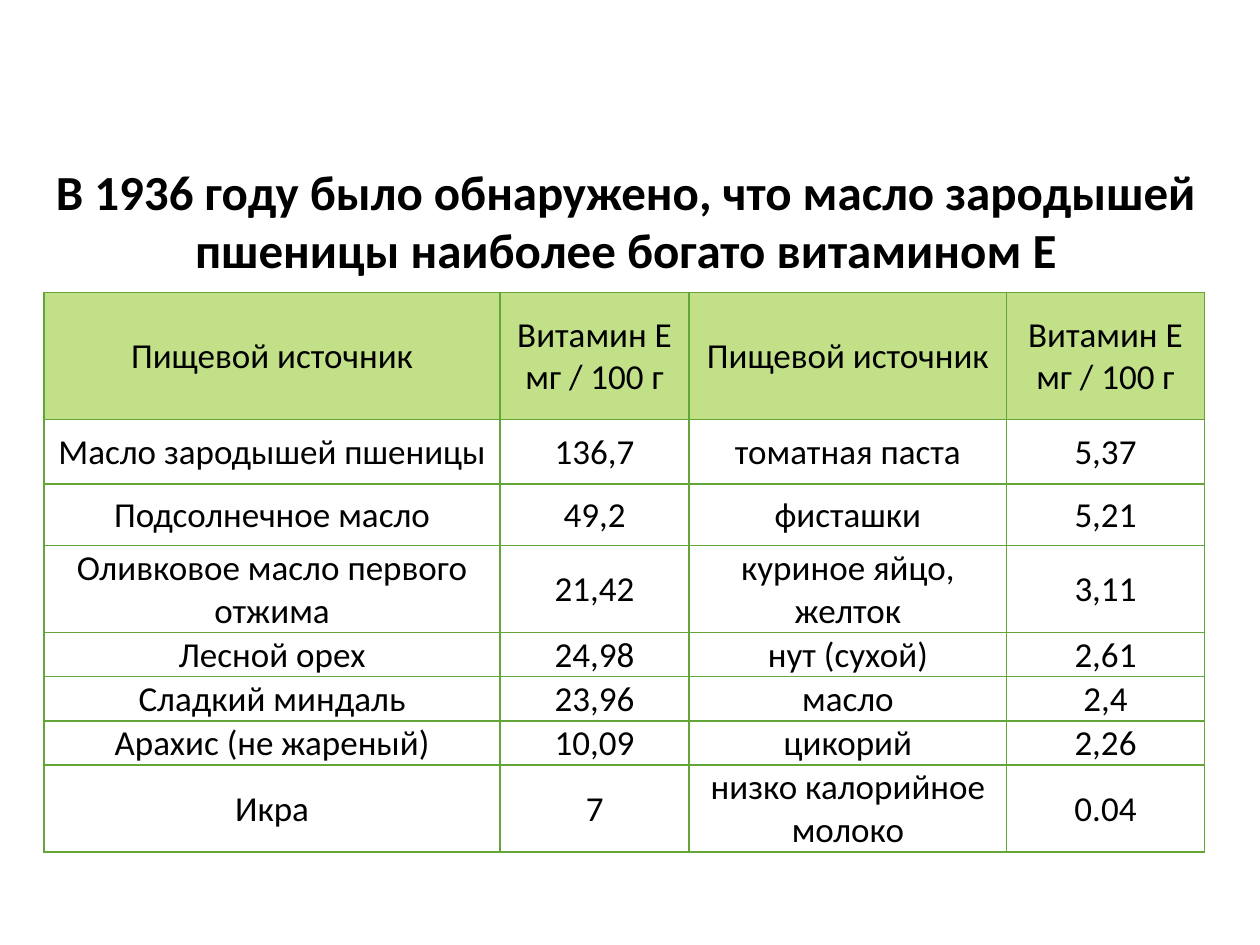
from lxml import etree
from pptx import Presentation
from pptx.dml.color import RGBColor
from pptx.enum.text import MSO_ANCHOR, MSO_AUTO_SIZE, PP_ALIGN
from pptx.oxml.ns import qn
from pptx.util import Inches, Pt

CENTER = PP_ALIGN.CENTER
MIDDLE = MSO_ANCHOR.MIDDLE
GROW = MSO_AUTO_SIZE.SHAPE_TO_FIT_TEXT
BLACK = RGBColor(0x00, 0x00, 0x00)
GREEN = RGBColor(0x63, 0xA5, 0x37)
LIGHT_GREEN = RGBColor(0xC2, 0xE0, 0x88)
FONT = "Calibri"

TITLE = ("В 1936 году было обнаружено, что масло зародышей пшеницы "
         "наиболее богато витамином Е")
HEADER = ("Пищевой источник", "Витамин Е\nмг / 100 г") * 2
ROWS = [
    HEADER,
    ("Масло зародышей пшеницы", "136,7", "томатная паста", "5,37"),
    ("Подсолнечное масло", "49,2", "фисташки", "5,21"),
    ("Оливковое масло первого отжима", "21,42", "куриное яйцо, желток", "3,11"),
    ("Лесной орех", "24,98", "нут (сухой)", "2,61"),
    ("Сладкий миндаль", "23,96", "масло", "2,4"),
    ("Арахис (не жареный)", "10,09", "цикорий", "2,26"),
    ("Икра", "7", "низко калорийное молоко", "0.04"),
]
COLUMN_WIDTHS = (3.62, 1.5, 2.52, 1.57)
ROW_HEIGHTS = (1.01, 0.51, 0.49, 0.58, 0.32, 0.32, 0.32, 0.58)


def write_lines(text_frame, text, size, bold=False):
    """Write each line of text as a centred paragraph."""
    for index, line in enumerate(text.split("\n")):
        paragraph = text_frame.add_paragraph() if index else text_frame.paragraphs[0]
        paragraph.alignment = CENTER
        run = paragraph.add_run()
        run.text = line
        run.font.name = FONT
        run.font.size = Pt(size)
        run.font.bold = bold
        run.font.color.rgb = BLACK


def add_borders(cell):
    """Draw a 1 pt green line on all four sides; lines must precede the fill."""
    properties = cell._tc.get_or_add_tcPr()
    for index, side in enumerate(("a:lnL", "a:lnR", "a:lnT", "a:lnB")):
        line = etree.Element(qn(side), w=str(Pt(1)))
        fill = etree.SubElement(line, qn("a:solidFill"))
        etree.SubElement(fill, qn("a:srgbClr"), val=str(GREEN))
        properties.insert(index, line)


presentation = Presentation()
presentation.slide_width = Inches(10)
presentation.slide_height = Inches(7.5)
slide = presentation.slides.add_slide(presentation.slide_layouts[6])

table = slide.shapes.add_table(
    len(ROWS), len(COLUMN_WIDTHS), Inches(0.35), Inches(2.32),
    Inches(sum(COLUMN_WIDTHS)), Inches(sum(ROW_HEIGHTS))).table
table.first_row = False
table.horz_banding = False
for column, width in zip(table.columns, COLUMN_WIDTHS):
    column.width = Inches(width)

for row, height, texts in zip(table.rows, ROW_HEIGHTS, ROWS):
    row.height = Inches(height)
    for cell, text in zip(row.cells, texts):
        cell.vertical_anchor = MIDDLE
        cell.margin_left = cell.margin_right = cell.margin_top = Inches(0.01)
        cell.margin_bottom = Inches(0)
        if texts is HEADER:
            cell.fill.solid()
            cell.fill.fore_color.rgb = LIGHT_GREEN
        else:
            cell.fill.background()
        add_borders(cell)
        write_lines(cell.text_frame, text, 20)

title = slide.shapes.add_textbox(Inches(0.2), Inches(1.23), Inches(9.53), Inches(1.04))
title.text_frame.word_wrap = True
title.text_frame.auto_size = GROW
write_lines(title.text_frame, TITLE, 28, bold=True)

presentation.save("out.pptx")
